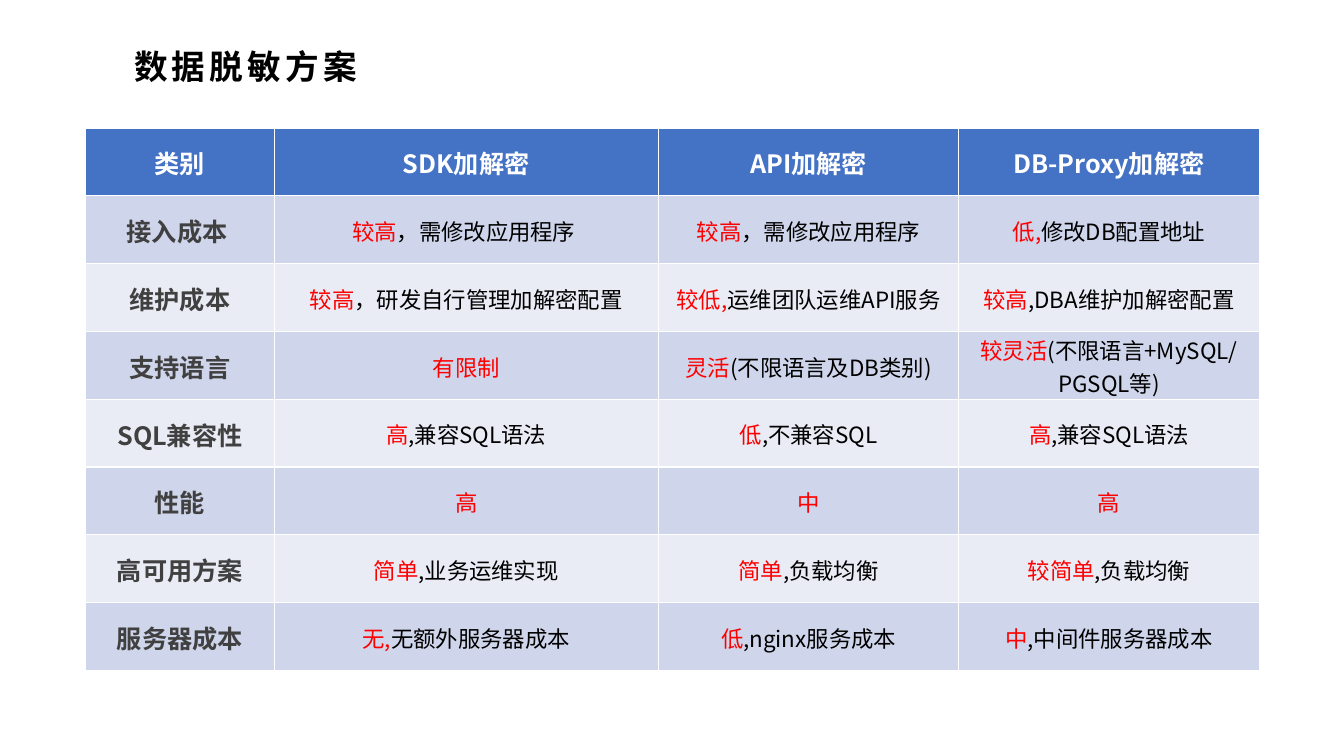
from lxml import etree
from pptx import Presentation
from pptx import util as u
from pptx.dml.color import RGBColor
from pptx.enum import text
from pptx.oxml.ns import qn

FONT = "Noto Sans CJK SC"
BLACK = RGBColor(0x00, 0x00, 0x00)
WHITE = RGBColor(0xFF, 0xFF, 0xFF)
RED = RGBColor(0xFF, 0x00, 0x00)
GREY = RGBColor(0x40, 0x40, 0x40)
BLUE = RGBColor(0x44, 0x72, 0xC4)
DARK_BAND = RGBColor(0xCF, 0xD5, 0xEA)
LIGHT_BAND = RGBColor(0xE9, 0xEB, 0xF5)


def write(paragraph, parts, size, bold, align):
    paragraph.alignment = align
    paragraph.font.name = FONT
    paragraph.font.size = u.Pt(size)
    paragraph.font.bold = bold
    properties = paragraph._p.pPr.find(qn("a:defRPr"))
    etree.SubElement(properties, qn("a:ea"), typeface=FONT)
    for wording, color in parts:
        if wording:
            run = paragraph.add_run()
            run.text = wording
            run.font.color.rgb = color


presentation = Presentation()
presentation.slide_width = u.Inches(13.33)
presentation.slide_height = u.Inches(7.5)
slide = presentation.slides.add_slide(presentation.slide_layouts[5])

heading = slide.shapes.title
heading.left, heading.top = u.Inches(1.23), u.Inches(0.41)
heading.width, heading.height = u.Inches(9.25), u.Inches(0.5)
heading.text_frame.auto_size = text.MSO_AUTO_SIZE.NONE
heading.text_frame.vertical_anchor = text.MSO_ANCHOR.MIDDLE
heading_line = heading.text_frame.paragraphs[0]
write(heading_line, [("数据脱敏方案", BLACK)], 24, True, text.PP_ALIGN.LEFT)
heading_line.runs[0].font._element.set("spc", "300")

schemes = ["类别", "SDK加解密", "API加解密", "DB-Proxy加解密"]
criteria = [
    ("接入成本 ", ("较高", "，需修改应用程序 "), ("较高", "，需修改应用程序"), ("低,", "修改DB配置地址")),
    ("维护成本", ("较高", "，研发自行管理加解密配置"), ("较低,", "运维团队运维API服务"),
     ("较高", ",DBA维护加解密配置")),
    ("支持语言", ("有限制", ""), ("灵活", "(不限语言及DB类别)"),
     ("较灵活", "(不限语言+MySQL/PGSQL等)")),
    ("SQL兼容性", ("高", ",兼容SQL语法"), ("低", ",不兼容SQL"), ("高", ",兼容SQL语法")),
    ("性能", ("高", ""), ("中", ""), ("高", "")),
    ("高可用方案", ("简单", ",业务运维实现"), ("简单", ",负载均衡"), ("较简单", ",负载均衡")),
    ("服务器成本", ("无,", "无额外服务器成本"), ("低", ",nginx服务成本"), ("中", ",中间件服务器成本")),
]

comparison = slide.shapes.add_table(
    len(criteria) + 1, len(schemes),
    u.Inches(0.85), u.Inches(1.27), u.Inches(11.62), u.Inches(5.38)).table
for column, width in zip(comparison.columns, [1.87, 3.81, 2.98, 2.98]):
    column.width = u.Inches(width)
for row in comparison.rows:
    row.height = u.Inches(5.38 / 8)

for row_number, entries in enumerate([schemes] + criteria):
    if row_number == 0:
        band = BLUE
    else:
        band = DARK_BAND if row_number % 2 else LIGHT_BAND
    for column_number, entry in enumerate(entries):
        cell = comparison.cell(row_number, column_number)
        cell.fill.solid()
        cell.fill.fore_color.rgb = band
        cell.vertical_anchor = text.MSO_ANCHOR.MIDDLE
        cell.margin_top, cell.margin_bottom = u.Inches(0.02), 0
        label = row_number == 0 or column_number == 0
        if label:
            parts = [(entry, GREY if row_number else WHITE)]
        else:
            parts = zip(entry, (RED, BLACK))
        write(cell.text_frame.paragraphs[0], parts, 18 if label else 16, label,
              text.PP_ALIGN.CENTER)

presentation.save("out.pptx")
